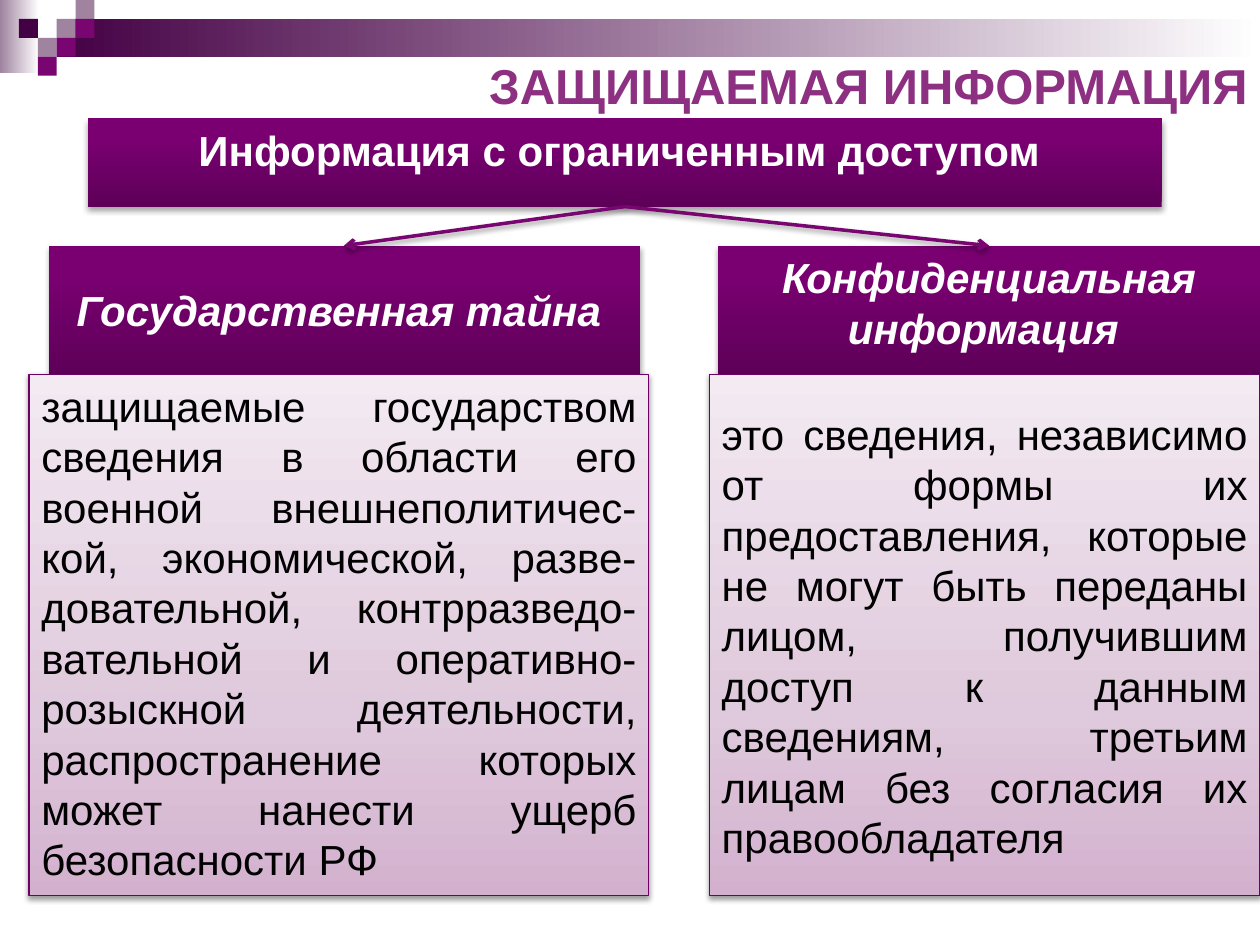
from lxml import etree
from pptx import Presentation
from pptx.dml.color import RGBColor
from pptx.enum.shapes import MSO_CONNECTOR, MSO_SHAPE
from pptx.enum.text import MSO_ANCHOR as Anchor, MSO_AUTO_SIZE as AutoSize, PP_ALIGN as Align
from pptx.oxml import parse_xml
from pptx.oxml.ns import nsdecls, qn
from pptx.util import Inches, Pt

COLORS = {
    "dark": "440044", "plum": "790571", "mauve": "9F839F", "white": "FFFFFF",
    "black": "000000", "border": "6D0166",
}
HEADING_STOPS = [(0, "5E0058"), (80, "7A0072"), (100, "7B0072")]
BODY_STOPS = [(0, "D3B1CE"), (35, "DFC9DC"), (100, "F3EAF2")]
TITLE_STOPS = [(0, "C285BA"), (75, "8D3082"), (100, "5D0057")]


def set_gradient(fill, owner, stops, angle):
    """Fill with any number of stops; angle is counter-clockwise."""
    fill.gradient()
    fill.gradient_angle = angle
    stop_list = next(owner.iter(qn("a:gsLst")))
    for stop in list(stop_list):
        stop_list.remove(stop)
    for position, color in stops:
        stop = etree.SubElement(stop_list, qn("a:gs"), pos=str(position * 1000))
        etree.SubElement(stop, qn("a:srgbClr"), val=color)


def add_shadow(shape, alpha, distance):
    shape._element.spPr.append(parse_xml(
        f'<a:effectLst {nsdecls("a")}><a:outerShdw blurRad="{Pt(3.1)}" dist="{Pt(distance)}" '
        f'dir="5400000" rotWithShape="0"><a:srgbClr val="{COLORS["black"]}">'
        f'<a:alpha val="{alpha * 1000}"/></a:srgbClr></a:outerShdw></a:effectLst>'))


prs = Presentation()
prs.slide_width, prs.slide_height = Inches(10), Inches(7.5)
slide = prs.slides.add_slide(prs.slide_layouts[5])
shapes = slide.shapes

# Header bands and mosaic
bands = [((0, 0, 0.31, 0.58), "mauve"), ((0.45, 0.15, 9.55, 0.3), "dark")]
for box, start in bands:
    band = shapes.add_shape(MSO_SHAPE.RECTANGLE, *map(Inches, box))
    set_gradient(band.fill, band._element.spPr, [(0, COLORS[start]), (100, COLORS["white"])], 0)
    band.line.fill.background()
    band.shadow.inherit = False

TILE = 0.15
tiles = [(3, 1, "mauve"), (4, 0, "mauve"), (4, 1, "plum"), (2, 2, "mauve"),
         (1, 1, "dark"), (3, 2, "plum"), (2, 3, "plum")]
for column, row, color in tiles:
    tile = shapes.add_shape(MSO_SHAPE.RECTANGLE, Inches(column * TILE), Inches(row * TILE),
                            Inches(TILE), Inches(TILE))
    tile.fill.solid()
    tile.fill.fore_color.rgb = RGBColor.from_string(COLORS[color])
    tile.line.fill.background()
    tile.shadow.inherit = False

# Title
title = shapes.title
title.left, title.top, title.width, title.height = map(Inches, (0.55, 0.39, 9.45, 0.57))
title.text_frame.auto_size = AutoSize.SHAPE_TO_FIT_TEXT
title.text_frame.vertical_anchor = Anchor.TOP
title_line = title.text_frame.paragraphs[0]
title_line.alignment = Align.RIGHT
title_run = title_line.add_run()
title_run.text = "ЗАЩИЩАЕМАЯ ИНФОРМАЦИЯ"
title_run.font.name, title_run.font.size, title_run.font.bold = "Arial", Pt(28), True
set_gradient(title_run.font.fill, title_line._p, TITLE_STOPS, 270)

# Headings: box, text, italic, anchor
headings = [
    ((0.7, 0.94, 8.52, 0.7), "Информация с ограниченным доступом ", False, Anchor.TOP),
    ((0.39, 1.95, 4.69, 1.02), "Государственная тайна ", True, Anchor.MIDDLE),
    ((5.7, 1.95, 4.3, 1.02), "Конфиденциальная информация ", True, Anchor.TOP),
]
for box, text, italic, anchor in headings:
    heading = shapes.add_shape(MSO_SHAPE.RECTANGLE, *map(Inches, box))
    set_gradient(heading.fill, heading._element.spPr, HEADING_STOPS, 90)
    heading.line.fill.background()
    add_shadow(heading, 35, 1.8)
    heading.text_frame.word_wrap = True
    heading.text_frame.vertical_anchor = anchor
    paragraph = heading.text_frame.paragraphs[0]
    paragraph.alignment = Align.CENTER
    run = paragraph.add_run()
    run.text = text
    run.font.name, run.font.size = "Arial", Pt(24)
    run.font.bold, run.font.italic = True, italic
    run.font.color.rgb = RGBColor.from_string(COLORS["white"])

# Definitions: left, width, text, anchor, autosize
definitions = [
    (0.23, 4.92,
     "защищаемые государством сведения в области его военной внешнеполитичес-кой, "
     "экономической, разве-довательной, контрразведо-вательной и оперативно-розыскной "
     "деятельности, распространение которых может нанести ущерб безопасности РФ",
     Anchor.TOP, AutoSize.SHAPE_TO_FIT_TEXT),
    (5.63, 4.37,
     "это сведения, независимо от формы их предоставления, которые не могут быть переданы "
     "лицом, получившим доступ к данным сведениям, третьим лицам без согласия их "
     "правообладателя",
     Anchor.MIDDLE, AutoSize.NONE),
]
for left, width, text, anchor, auto_size in definitions:
    definition = shapes.add_shape(MSO_SHAPE.RECTANGLE, Inches(left), Inches(2.97),
                                  Inches(width), Inches(4.14))
    set_gradient(definition.fill, definition._element.spPr, BODY_STOPS, 90)
    definition.line.color.rgb = RGBColor.from_string(COLORS["border"])
    definition.line.width = Pt(0.75)
    add_shadow(definition, 38, 1.6)
    definition.text_frame.word_wrap = True
    definition.text_frame.auto_size = auto_size
    definition.text_frame.vertical_anchor = anchor
    paragraph = definition.text_frame.paragraphs[0]
    paragraph.alignment = Align.JUSTIFY
    run = paragraph.add_run()
    run.text = text
    run.font.name, run.font.size = "Arial", Pt(24)
    run.font.color.rgb = RGBColor.from_string(COLORS["black"])

# Arrows from the main heading to the two kinds
for target in (2.73, 7.85):
    arrow = shapes.add_connector(MSO_CONNECTOR.STRAIGHT, Inches(4.96), Inches(1.64),
                                 Inches(target), Inches(1.95))
    arrow.line.color.rgb = RGBColor.from_string(COLORS["plum"])
    arrow.line.width = Pt(2)
    etree.SubElement(arrow._element.spPr.find(qn("a:ln")), qn("a:tailEnd"), type="arrow")
    add_shadow(arrow, 38, 1.6)

prs.save("out.pptx")
